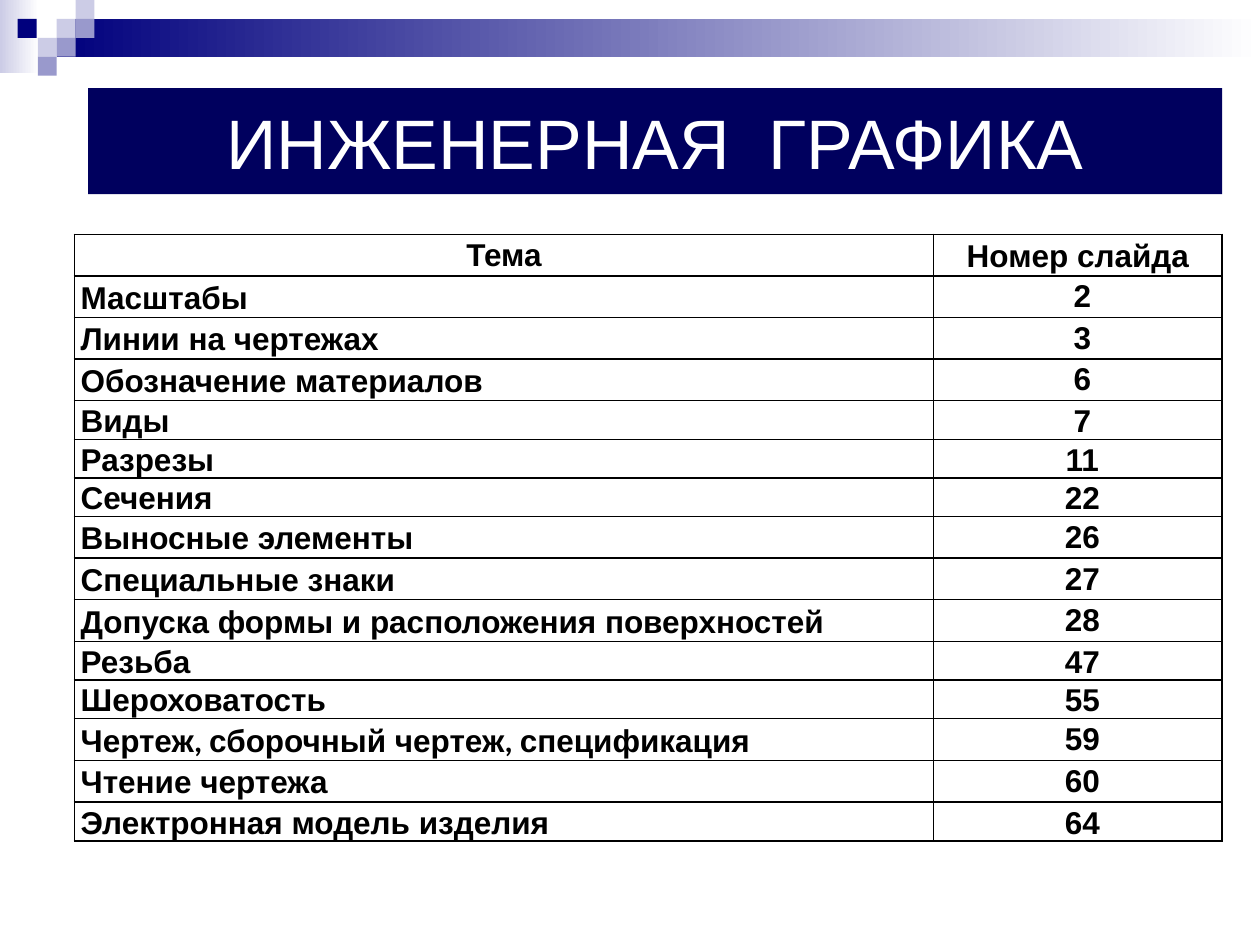
"""Build the contents slide of an engineering graphics course."""
from lxml.etree import SubElement
from pptx import Presentation
from pptx.dml.color import RGBColor
from pptx.enum.shapes import MSO_SHAPE as Shape
from pptx.enum.text import MSO_ANCHOR as Anchor, MSO_AUTO_SIZE as Fit, PP_ALIGN as Align
from pptx.oxml.ns import qn
from pptx.util import Inches, Pt

NAVY = RGBColor(0x00, 0x00, 0x7D)
DARK = RGBColor(0x00, 0x00, 0x5E)
LILAC = RGBColor(0xCC, 0xCC, 0xE6)
VIOLET = RGBColor(0x99, 0x99, 0xCC)
WHITE = RGBColor(0xFF, 0xFF, 0xFF)
BLACK = RGBColor(0x00, 0x00, 0x00)

TALL, SHORT = 0.33, 0.3
TOPICS = [
    ("Тема", "Номер слайда", TALL),
    ("Масштабы", "2", TALL),
    ("Линии на чертежах", "3", TALL),
    ("Обозначение материалов", "6", TALL),
    ("Виды", "7", SHORT),
    ("Разрезы", "11", SHORT),
    ("Сечения", "22", SHORT),
    ("Выносные элементы", "26", TALL),
    ("Специальные знаки", "27", TALL),
    ("Допуска формы и расположения поверхностей", "28", TALL),
    ("Резьба", "47", SHORT),
    ("Шероховатость", "55", SHORT),
    ("Чертеж, сборочный чертеж, спецификация", "59", TALL),
    ("Чтение чертежа", "60", TALL),
    ("Электронная модель изделия", "64", SHORT),
]


def add_rect(left, top, width, height, color, fade=False):
    rect = slide.shapes.add_shape(
        Shape.RECTANGLE, Inches(left), Inches(top), Inches(width), Inches(height))
    rect.shadow.inherit = False
    rect.line.fill.background()
    if fade:
        rect.fill.gradient()
        rect.fill.gradient_angle = 0
        for stop, shade in zip(rect.fill.gradient_stops, (color, WHITE)):
            stop.color.rgb = shade
    else:
        rect.fill.solid()
        rect.fill.fore_color.rgb = color


def add_border(cell):
    props = cell._tc.get_or_add_tcPr()
    for place, side in enumerate(("a:lnL", "a:lnR", "a:lnT", "a:lnB")):
        line = SubElement(props, qn(side), w=str(Pt(1)))
        props.insert(place, line)
        fill = SubElement(line, qn("a:solidFill"))
        SubElement(fill, qn("a:srgbClr"), val=str(BLACK))


deck = Presentation()
deck.slide_width, deck.slide_height = Inches(10), Inches(7.5)
slide = deck.slides.add_slide(deck.slide_layouts[5])

add_rect(0, 0, 0.31, 0.58, LILAC, fade=True)
add_rect(0.45, 0.15, 9.55, 0.3, NAVY, fade=True)
for left, top, color in [
    (0.45, 0.15, LILAC), (0.6, 0, LILAC), (0.6, 0.15, VIOLET), (0.3, 0.3, LILAC),
    (0.14, 0.15, NAVY), (0.45, 0.3, VIOLET), (0.3, 0.45, VIOLET),
]:
    add_rect(left, top, 0.15, 0.15, color)

title = slide.shapes.title
title.left, title.top = Inches(0.7), Inches(0.7)
title.width, title.height = Inches(9), Inches(0.84)
title.fill.solid()
title.fill.fore_color.rgb = DARK
title.text = "ИНЖЕНЕРНАЯ  ГРАФИКА"
title.text_frame.auto_size = Fit.NONE
title.text_frame.vertical_anchor = Anchor.MIDDLE
head = title.text_frame.paragraphs[0]
head.alignment = Align.CENTER
head.font.name, head.font.size = "Arial", Pt(40)
head.font.color.rgb = WHITE

high = sum(height for *_, height in TOPICS)
table = slide.shapes.add_table(
    len(TOPICS), 2, Inches(0.59), Inches(1.86), Inches(9.11), Inches(high)).table
table.first_row = table.horz_banding = False
table.columns[0].width, table.columns[1].width = Inches(6.82), Inches(2.29)

for row, (*texts, height) in enumerate(TOPICS):
    table.rows[row].height = Inches(height)
    for col, text in enumerate(texts):
        cell = table.cell(row, col)
        cell.fill.background()
        add_border(cell)
        number = row > 0 and col == 1
        cell.margin_left = Inches(0.12 if number else 0.05)
        cell.margin_right = Inches(0.05)
        cell.margin_top, cell.margin_bottom = Inches(0.01), 0
        cell.vertical_anchor = Anchor.MIDDLE if (row == 0) == (col == 1) else Anchor.TOP
        para = cell.text_frame.paragraphs[0]
        para.alignment = Align.LEFT if row and col == 0 else Align.CENTER
        para.line_spacing = 1.06
        para.font.name, para.font.size, para.font.bold = "Arial", Pt(18), True
        para.font.color.rgb = BLACK
        for part, words in enumerate(text.split(", ")):
            if part:
                comma = para.add_run()
                comma.text, comma.font.name = ", ", "Calibri"
            para.add_run().text = words

deck.save("out.pptx")
